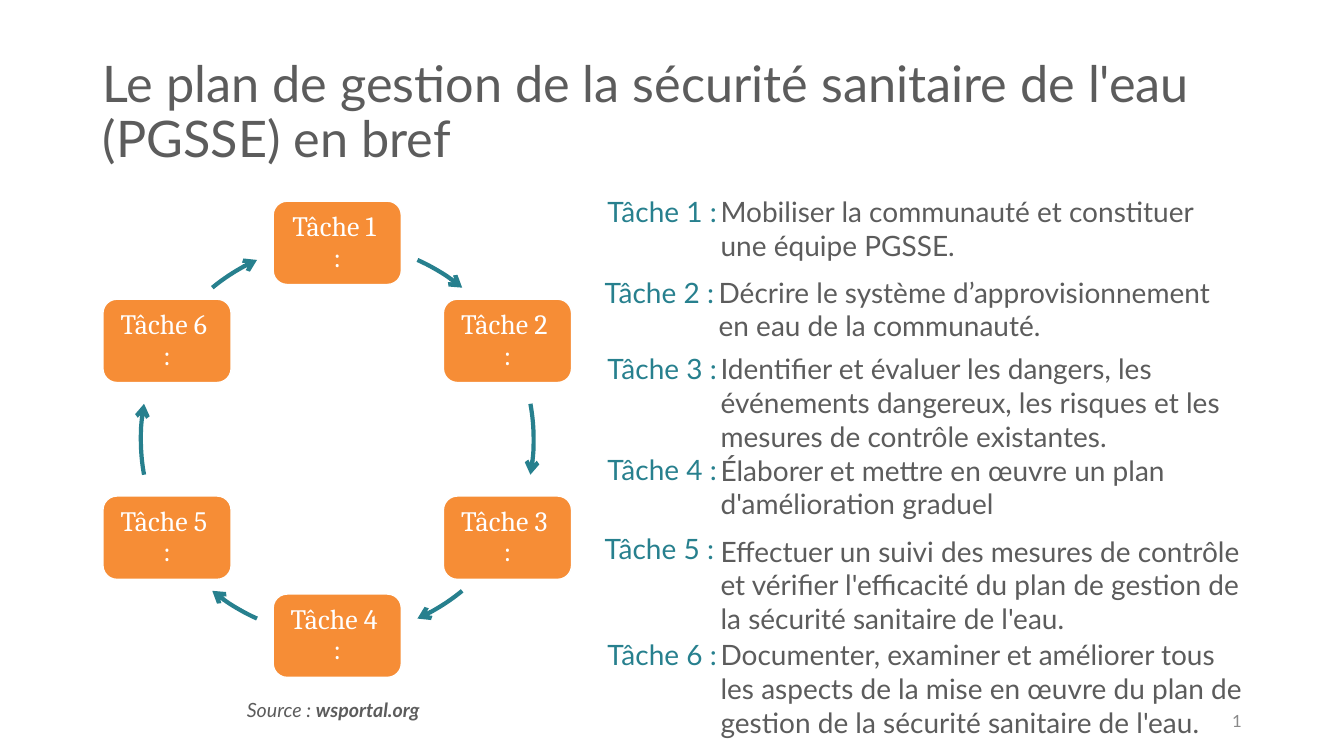
from lxml import etree
from pptx import Presentation
from pptx.dml.color import RGBColor
from pptx.enum.shapes import MSO_SHAPE
from pptx.enum.text import MSO_ANCHOR, MSO_AUTO_SIZE, PP_ALIGN
from pptx.oxml import parse_xml
from pptx.oxml.ns import nsdecls, qn
from pptx.util import Cm, Pt

ROUNDED, ARC = MSO_SHAPE.ROUNDED_RECTANGLE, MSO_SHAPE.ARC
TOP, MIDDLE = MSO_ANCHOR.TOP, MSO_ANCHOR.MIDDLE
LEFT, CENTER, RIGHT = PP_ALIGN.LEFT, PP_ALIGN.CENTER, PP_ALIGN.RIGHT
GROW, FIXED = MSO_AUTO_SIZE.SHAPE_TO_FIT_TEXT, MSO_AUTO_SIZE.NONE

TITLE = "Le plan de gestion de la sécurité sanitaire de l'eau (PGSSE) en bref"
TASKS = [
    (15.06, 17.91, 4.78, 4.78, 1.96, "Mobiliser la communauté et constituer une équipe PGSSE."),
    (14.99, 17.86, 6.81, 6.81, 1.96, "Décrire le système d’approvisionnement en eau de la communauté."),
    (15.06, 17.91, 8.74, 8.74, 2.82, "Identifier et évaluer les dangers, les événements dangereux, "
     "les risques et les mesures de contrôle existantes."),
    (15.06, 17.91, 11.28, 11.3, 1.96, "Élaborer et mettre en œuvre un plan d'amélioration graduel"),
    (14.99, 17.91, 13.28, 13.34, 1.96, "Effectuer un suivi des mesures de contrôle et vérifier "
     "l'efficacité du plan de gestion de la sécurité sanitaire de l'eau."),
    (15.06, 17.91, 15.93, 15.95, 1.96, "Documenter, examiner et améliorer tous les aspects de la mise "
     "en œuvre du plan de gestion de la sécurité sanitaire de l'eau."),
]
CENTER_X, CENTER_Y, RADIUS = 8.5, 11.07, 4.95
BOX_OFFSETS = [(0, -4.95), (4.29, -2.48), (4.29, 2.48), (0, 4.95), (-4.29, 2.48), (-4.29, -2.48)]
ARROW_ANGLES = [(24.1, 39.5), (79.6, 100.4), (140.5, 155.9),
                (204.1, 219.5), (259.6, 280.4), (320.5, 335.9)]


def color(value):
    return RGBColor.from_string(value)


class SlideBuilder:
    gray, teal, orange, white, pale = "5C5C5C", "27808E", "F68D36", "FFFFFF", "898989"
    body_font, box_font = "Lato", "Cambria"

    def __init__(self, page):
        self.page = page

    def style(self, font, size, tint, name=body_font):
        font.size, font.name = Pt(size), name
        font.color.rgb = color(tint)

    def title(self, text, left, top, width, height):
        holder = self.page.shapes.title
        holder.left, holder.top, holder.width, holder.height = map(Cm, (left, top, width, height))
        frame = holder.text_frame
        frame.text = text
        frame.auto_size, frame.vertical_anchor = FIXED, MIDDLE
        para = frame.paragraphs[0]
        para.alignment, para.line_spacing = LEFT, 0.9
        self.style(para.runs[0].font, 36, self.gray)

    def text(self, text, left, top, width, height, size, tint, align=LEFT, anchor=TOP, fit=FIXED):
        box = self.page.shapes.add_textbox(Cm(left), Cm(top), Cm(width), Cm(height))
        frame = box.text_frame
        frame.word_wrap, frame.auto_size, frame.vertical_anchor = True, fit, anchor
        para = frame.paragraphs[0]
        para.text = text
        para.alignment = align
        for span in para.runs:
            self.style(span.font, size, tint)
        return para

    def source(self, label, address, left, top, width, height):
        para = self.text(label, left, top, width, height, 14, self.gray, CENTER)
        para.line_spacing = 1.5
        span = para.add_run()
        span.text = address
        self.style(span.font, 14, self.gray)
        span.font.bold = True
        for span in para.runs:
            span.font.italic = True

    def page_number(self, number, left, top, width, height):
        para = self.text(number, left, top, width, height, 12, self.pale, RIGHT, MIDDLE)
        run = para.runs[0]._r
        field = parse_xml(f'<a:fld {nsdecls("a")} id="{{B6F15528-21DE-4FAA-801E-634DDDAF4B2B}}" '
                          'type="slidenum"/>')
        run.addprevious(field)
        for part in list(run):
            field.append(part)
        run.getparent().remove(run)

    def task_box(self, text, center_x, center_y, width=3.23, height=2.1):
        box = self.page.shapes.add_shape(ROUNDED, Cm(center_x - width / 2), Cm(center_y - height / 2),
                                         Cm(width), Cm(height))
        box.shadow.inherit = False
        box.fill.solid()
        box.fill.fore_color.rgb = color(self.orange)
        box.line.color.rgb = color(self.white)
        box.line.width = Pt(1)
        frame = box.text_frame
        frame.margin_left = frame.margin_right = Cm(0.3)
        frame.margin_top = frame.margin_bottom = Cm(0.3)
        frame.vertical_anchor = MIDDLE
        para = frame.paragraphs[0]
        para.text = text
        para.alignment, para.line_spacing = CENTER, 0.9
        self.style(para.runs[0].font, 20, self.white, self.box_font)

    def cycle_arrow(self, start, end):
        arc = self.page.shapes.add_shape(ARC, Cm(CENTER_X - RADIUS), Cm(CENTER_Y - RADIUS),
                                         Cm(2 * RADIUS), Cm(2 * RADIUS))
        arc.shadow.inherit = False
        arc.fill.background()
        for index, angle in enumerate((start, end)):
            arc.adjustments[index] = (angle - 90) % 360 * 0.6
        arc.line.color.rgb = color(self.teal)
        arc.line.width = Pt(3)
        etree.SubElement(arc.line._get_or_add_ln(), qn("a:tailEnd"), type="arrow")


def main():
    deck = Presentation()
    deck.slide_width, deck.slide_height = Cm(33.87), Cm(19.05)
    builder = SlideBuilder(deck.slides.add_slide(deck.slide_layouts[5]))
    builder.page_number("7", 23.93, 17.65, 7.62, 1.02)
    builder.title(TITLE, 2.34, 1.02, 30, 3.68)
    labels = [f"Tâche\u00a0{number}\u00a0:" for number in range(1, len(TASKS) + 1)]
    for label, (shift_x, shift_y), angles in zip(labels, BOX_OFFSETS, ARROW_ANGLES):
        builder.task_box(label, CENTER_X + shift_x, CENTER_Y + shift_y)
        builder.cycle_arrow(*angles)
    builder.source("Source\u00a0: ", "wsportal.org", 2.29, 17.17, 12.22, 0.89)
    for label, (label_left, text_left, label_top, text_top, height, text) in zip(labels, TASKS):
        builder.text(label, label_left, label_top, 3.4, 1.12, 20, builder.teal, fit=GROW)
        builder.text(text, text_left, text_top, 13.67, height, 20, builder.gray, fit=GROW)
    deck.save("out.pptx")


if __name__ == "__main__":
    main()
